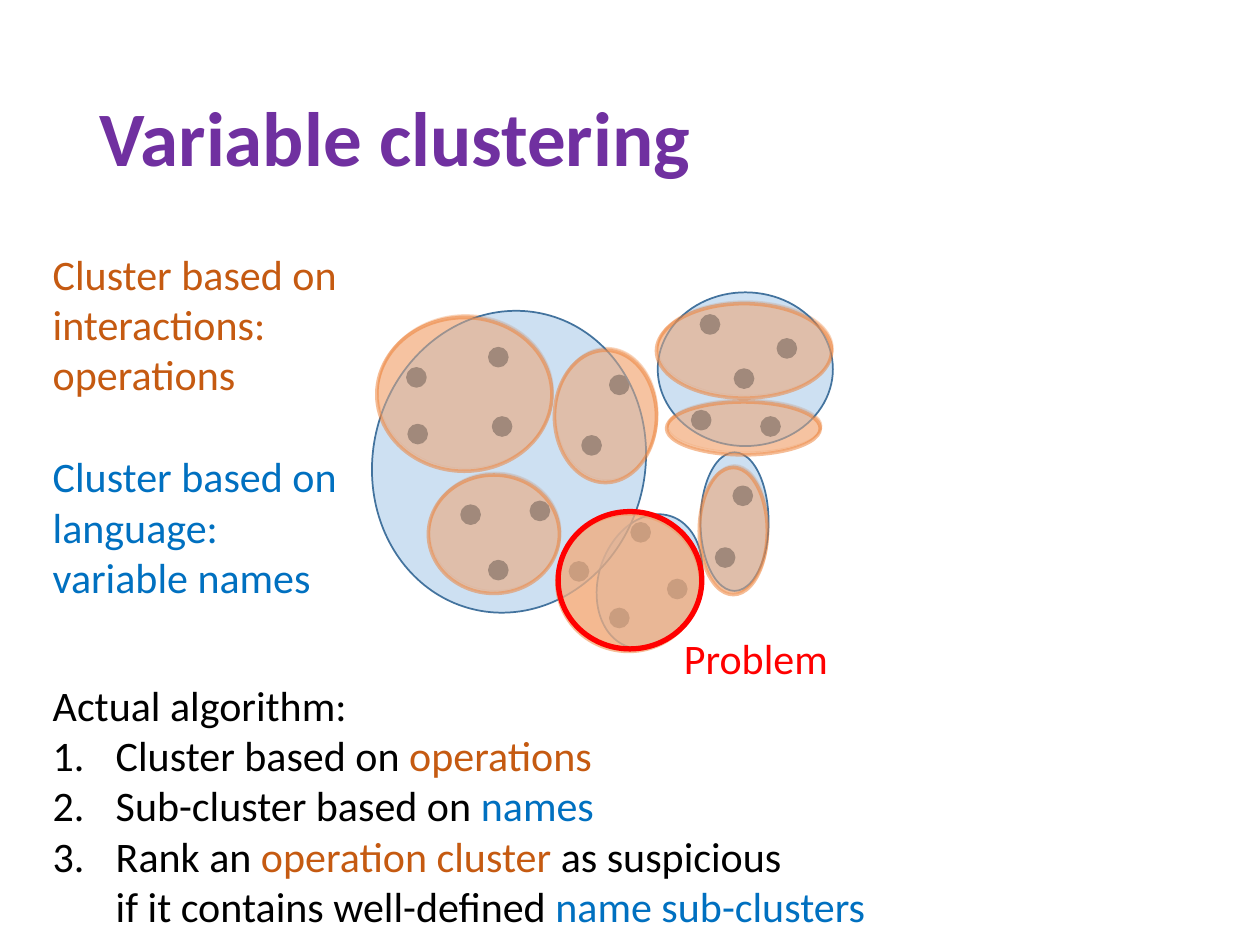
import pptx
import pptx.dml.color
import pptx.enum.shapes
import pptx.enum.text
import pptx.oxml
import pptx.oxml.ns
import pptx.util
from pptx.util import Inches, Pt

RGBColor = pptx.dml.color.RGBColor
PURPLE = RGBColor(0x70, 0x30, 0xA0)
BLACK = RGBColor(0x00, 0x00, 0x00)
RED = RGBColor(0xFF, 0x00, 0x00)
RUST = RGBColor(0xC5, 0x5A, 0x11)
BLUE = RGBColor(0x00, 0x70, 0xC0)
PEACH = RGBColor(0xF4, 0xB1, 0x83)
ORANGE = RGBColor(0xED, 0x7D, 0x31)
SKY = RGBColor(0x9D, 0xC3, 0xE6)
STEEL = RGBColor(0x43, 0x73, 0x9E)

FONT = "Calibri"
TITLE = "Variable clustering"
INTERACTIONS = [[("Cluster based on interactions:\noperations", RUST)]]
LANGUAGE = [[("Cluster based on language:\nvariable names", BLUE)]]
PROBLEM = [[("Problem", RED)]]
ALGORITHM = [
    [("Actual algorithm:", BLACK)],
    [("Cluster based on ", BLACK), ("operations", RUST)],
    [("Sub-cluster based on ", BLACK), ("names", BLUE)],
    [("Rank an ", BLACK), ("operation cluster", RUST),
     (" as suspicious\nif it contains well-defined ", BLACK), ("name sub-clusters", BLUE)],
]

# Ellipses in inches: left, top, width, height (and rotation for name clusters)
PROBLEM_CLUSTER = (4.43, 4.06, 1.14, 1.09)
OPERATION_CLUSTERS = [
    (5.3, 3.17, 1.22, 0.42), (5.56, 3.69, 0.54, 1.01), (3.41, 3.75, 1.04, 0.94),
    (4.41, 2.76, 0.81, 1.05), PROBLEM_CLUSTER, (5.22, 2.39, 1.39, 0.75),
    (3, 2.5, 1.39, 1.22),
]
NAME_CLUSTERS = [
    (5.56, 3.59, 0.54, 1.1, 0), (4.75, 4.07, 0.81, 1.09, 17.8),
    (5.22, 2.32, 1.39, 1.22, 0), (2.96, 2.46, 2.16, 2.41, 14.1),
]
VARIABLES = [
    (3.23, 2.92), (3.88, 2.76), (3.24, 3.37), (3.91, 3.31), (4.62, 3.46),
    (4.84, 2.98), (3.66, 4.01), (4.21, 3.98), (3.88, 4.45), (4.52, 4.46),
    (4.84, 4.83), (5.01, 4.15), (5.3, 4.6), (5.68, 4.35), (5.82, 3.86),
    (5.56, 2.5), (6.17, 2.69), (5.83, 2.93), (5.49, 3.26), (6.04, 3.31),
]
DOT = 0.15
OVERLAY_DX, OVERLAY_DY = -0.01, 0.02


def make_half_transparent(color_format_parent):
    for color in color_format_parent.iter(pptx.oxml.ns.qn("a:srgbClr")):
        alpha = pptx.oxml.parse_xml(
            f'<a:alpha {pptx.oxml.ns.nsdecls("a")} val="50000"/>')
        color.append(alpha)


def add_ellipse(slide, box, fill, line, width=1, rotation=0,
                clear_fill=True, clear_line=False):
    ellipse = slide.shapes.add_shape(
        pptx.enum.shapes.MSO_SHAPE.OVAL, *map(Inches, box))
    ellipse.rotation = rotation
    ellipse.shadow.inherit = False
    ellipse.fill.solid()
    ellipse.fill.fore_color.rgb = fill
    ellipse.line.color.rgb = line
    ellipse.line.width = Pt(width)
    properties = ellipse.element.spPr
    if clear_fill:
        make_half_transparent(properties.find(pptx.oxml.ns.qn("a:solidFill")))
    if clear_line:
        make_half_transparent(properties.find(pptx.oxml.ns.qn("a:ln")))


def add_run(paragraph, text, color, size, bold=None):
    run = paragraph.add_run()
    run.text = text
    run.font.name = FONT
    run.font.size = Pt(size)
    run.font.bold = bold
    run.font.color.rgb = color


def number(paragraph):
    properties = paragraph._p.get_or_add_pPr()
    properties.set("marL", str(Inches(0.5)))
    properties.set("indent", str(Inches(-0.5)))
    properties.append(pptx.oxml.parse_xml(
        f'<a:buAutoNum {pptx.oxml.ns.nsdecls("a")} type="arabicPeriod"/>'))


def add_text(slide, box, paragraphs, wrap):
    """Add a text box whose paragraphs after the first are numbered."""
    frame = slide.shapes.add_textbox(*map(Inches, box)).text_frame
    frame.word_wrap = wrap
    frame.auto_size = pptx.enum.text.MSO_AUTO_SIZE.SHAPE_TO_FIT_TEXT
    for index, runs in enumerate(paragraphs):
        paragraph = frame.add_paragraph() if index else frame.paragraphs[0]
        if index:
            number(paragraph)
        for text, color in runs:
            for line_index, line in enumerate(text.split("\n")):
                if line_index:
                    paragraph.add_line_break()
                add_run(paragraph, line, color, 24)


def add_title(slide):
    title = slide.shapes.title
    title.left, title.top, title.width, title.height = map(
        Inches, (0.69, 0.4, 8.62, 1.45))
    title.text_frame.vertical_anchor = pptx.enum.text.MSO_ANCHOR.MIDDLE
    paragraph = title.text_frame.paragraphs[0]
    paragraph.alignment = pptx.enum.text.PP_ALIGN.LEFT
    paragraph.line_spacing = 0.9
    add_run(paragraph, TITLE, PURPLE, 44, bold=True)


def add_clusters(slide):
    for box in OPERATION_CLUSTERS:
        add_ellipse(slide, box, PEACH, PEACH, clear_line=True)
    for left, top in VARIABLES:
        add_ellipse(slide, (left, top, DOT, DOT), BLACK, BLACK, clear_fill=False)
    for *box, rotation in NAME_CLUSTERS:
        add_ellipse(slide, box, SKY, STEEL, rotation=rotation)
    for left, top, width, height in OPERATION_CLUSTERS:
        add_ellipse(slide, (left + OVERLAY_DX, top + OVERLAY_DY, width, height),
                    PEACH, ORANGE, width=2, clear_line=True)
    add_ellipse(slide, PROBLEM_CLUSTER, PEACH, RED, width=3)


def main():
    presentation = pptx.Presentation()
    presentation.slide_width, presentation.slide_height = Inches(10), Inches(7.5)
    title_only = presentation.slide_layouts[5]
    slide = presentation.slides.add_slide(title_only)
    add_title(slide)
    add_clusters(slide)
    add_text(slide, (0.32, 3.53, 2.47, 1.31), LANGUAGE, wrap=True)
    add_text(slide, (0.32, 1.92, 2.47, 1.31), INTERACTIONS, wrap=True)
    add_text(slide, (5.33, 4.97, 1.36, 0.5), PROBLEM, wrap=False)
    add_text(slide, (0.32, 5.34, 6.72, 2.12), ALGORITHM, wrap=False)
    presentation.save("out.pptx")


if __name__ == "__main__":
    main()
